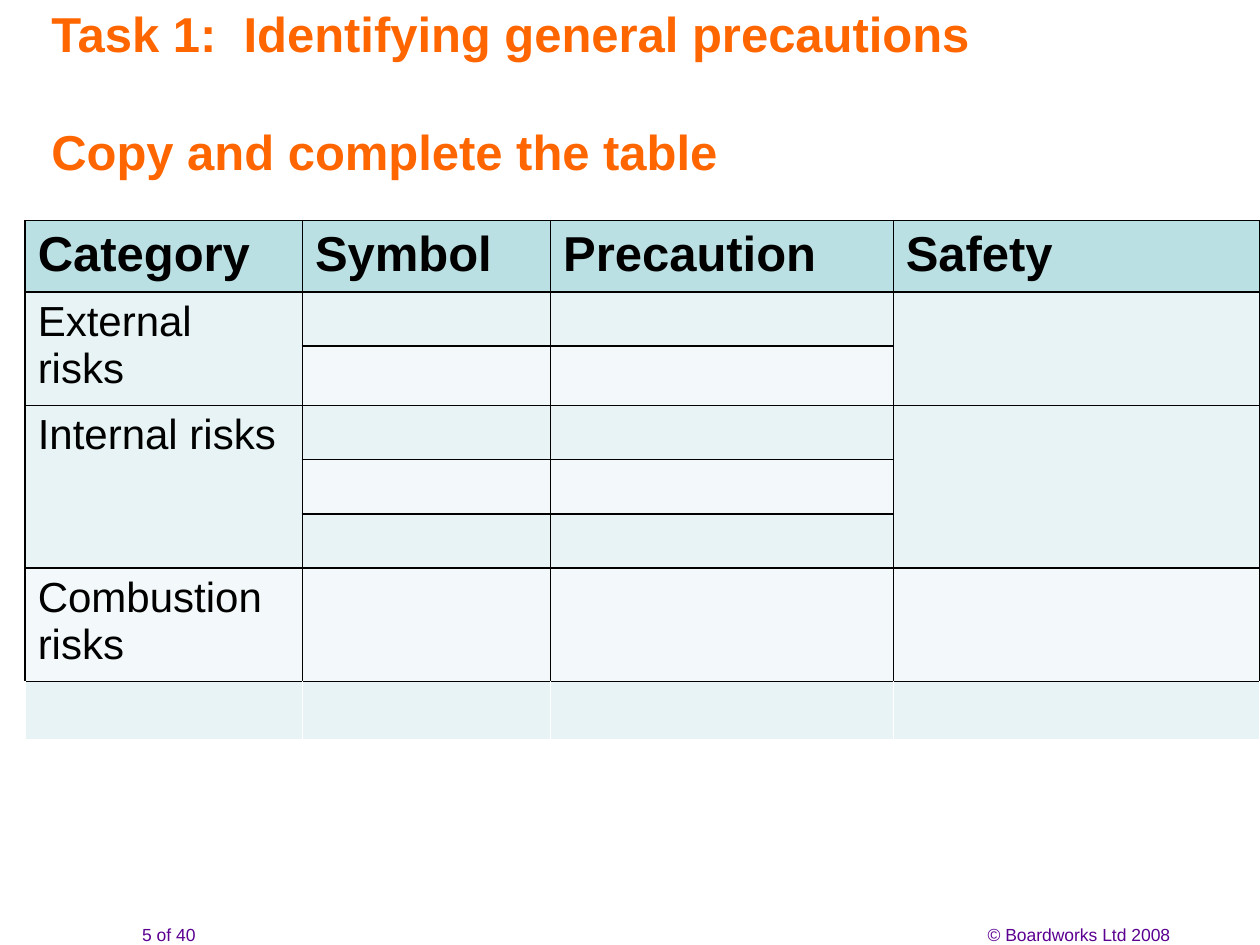
from lxml import etree
from pptx import Presentation
from pptx.dml.color import RGBColor
from pptx.enum.text import MSO_ANCHOR, PP_ALIGN
from pptx.oxml.ns import qn
from pptx.util import Inches, Pt

LEFT, CENTER = PP_ALIGN.LEFT, PP_ALIGN.CENTER
MIDDLE = MSO_ANCHOR.MIDDLE

ORANGE, PURPLE, BLACK, WHITE = "FF6600", "5B0091", "000000", "FFFFFF"
HEADER_FILL, DARK_BAND, LIGHT_BAND = "BBE0E3", "E7F3F4", "F3F9FA"

HEADINGS = ["Category", "Symbol", "Precaution", "Safety"]
CATEGORIES = [("External risks", 2), ("Internal risks", 3), ("Combustion risks", 1)]
COLUMN_WIDTHS = [2.2, 1.97, 2.72, 2.91]
ROW_HEIGHTS = [0.54] + [0.43] * 5 + [0.84, 0.46]


def color(hex_code):
    return RGBColor.from_string(hex_code)


def write(frame, text, size=24, ink=BLACK, bold=False, align=LEFT, gap=0):
    for index, line in enumerate(text.split("\n")):
        paragraph = frame.paragraphs[0] if index == 0 else frame.add_paragraph()
        paragraph.alignment = align
        if index:
            paragraph.space_before = Pt(gap)
        run = paragraph.add_run()
        run.text = line
        run.font.name = "Arial"
        run.font.size = Pt(size)
        run.font.bold = bold
        run.font.color.rgb = color(ink)


def add_label(slide, text, left, top, width, height, wrap=True, anchor=MIDDLE, **style):
    label = slide.shapes.add_textbox(Inches(left), Inches(top), Inches(width), Inches(height))
    label.text_frame.word_wrap = wrap
    label.text_frame.vertical_anchor = anchor
    write(label.text_frame, text, **style)


def set_borders(cell, **edges):
    properties = cell._tc.get_or_add_tcPr()
    for position, side in enumerate("LRTB"):
        line = etree.Element(qn(f"a:ln{side}"), w=str(Pt(1)))
        fill = etree.SubElement(line, qn("a:solidFill"))
        etree.SubElement(fill, qn("a:srgbClr"), val=edges.get(side, BLACK))
        properties.insert(position, line)


def add_risk_table(slide):
    table = slide.shapes.add_table(
        len(ROW_HEIGHTS), len(COLUMN_WIDTHS), Inches(0.2), Inches(1.75),
        Inches(sum(COLUMN_WIDTHS)), Inches(sum(ROW_HEIGHTS))).table
    for column, width in zip(table.columns, COLUMN_WIDTHS):
        column.width = Inches(width)
    for row, height in zip(table.rows, ROW_HEIGHTS):
        row.height = Inches(height)

    last = len(ROW_HEIGHTS) - 1
    for number, row in enumerate(table.rows):
        band = DARK_BAND if number % 2 else LIGHT_BAND
        edges = dict.fromkeys("LRB", WHITE) if number == last else {}
        for cell in row.cells:
            cell.fill.solid()
            cell.fill.fore_color.rgb = color(band if number else HEADER_FILL)
            set_borders(cell, **edges)

    for column, heading in enumerate(HEADINGS):
        write(table.cell(0, column).text_frame, heading, size=28, bold=True)

    first = 1
    for category, count in CATEGORIES:
        if count > 1:
            for column in (0, len(HEADINGS) - 1):
                table.cell(first, column).merge(table.cell(first + count - 1, column))
        write(table.cell(first, 0).text_frame, category)
        first += count


def main():
    presentation = Presentation()
    presentation.slide_width, presentation.slide_height = Inches(10), Inches(7.5)
    slide = presentation.slides.add_slide(presentation.slide_layouts[6])
    add_label(slide, "© Boardworks Ltd 2008", 7.74, 7.28, 1.65, 0.27,
              wrap=False, size=10, ink=PURPLE)
    add_label(slide, "5 of 40", 0.98, 7.28, 0.72, 0.27, size=10, ink=PURPLE, align=CENTER)
    add_label(slide, "Task 1:  Identifying general precautions\nCopy and complete the table",
              0.31, 0, 8.46, 1.46, size=28, ink=ORANGE, bold=True, gap=34)
    add_risk_table(slide)
    presentation.save("out.pptx")


if __name__ == "__main__":
    main()
